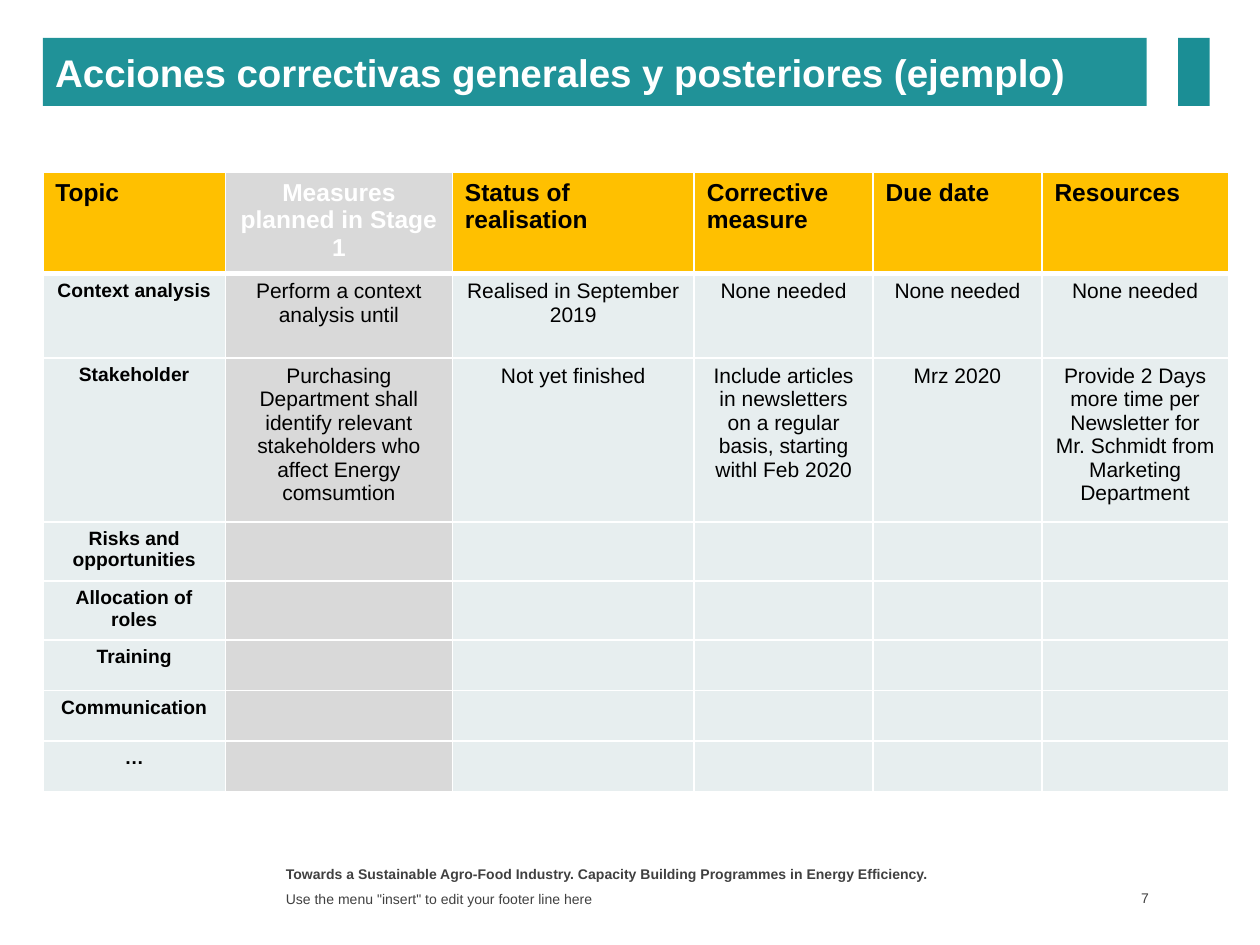
from pptx import Presentation
from pptx.dml.color import RGBColor
from pptx.enum.shapes import MSO_SHAPE
from pptx.enum.text import MSO_ANCHOR, PP_ALIGN
from pptx.oxml import parse_xml
from pptx.oxml.ns import nsdecls
from pptx.util import Inches, Pt

TEAL = RGBColor(0x20, 0x92, 0x98)
DARK_TEAL = RGBColor(0x1B, 0x8E, 0x95)
AMBER = RGBColor(0xFF, 0xC0, 0x00)
GREY = RGBColor(0xD9, 0xD9, 0xD9)
PALE = RGBColor(0xE7, 0xEE, 0xEF)
FOOTER_GREY = RGBColor(0x40, 0x40, 0x40)
BLACK = RGBColor(0, 0, 0)
WHITE = RGBColor(0xFF, 0xFF, 0xFF)


def write(frame, text, size, color, bold=False, align=PP_ALIGN.LEFT):
    frame.text = text
    frame.word_wrap = True
    paragraph = frame.paragraphs[0]
    paragraph.alignment = align
    for run in paragraph.runs:
        run.font.name = "Arial"
        run.font.size = Pt(size)
        run.font.bold = bold
        run.font.color.rgb = color


def set_borders(cell, bottom_width, top_width):
    widths = {"lnL": 1, "lnR": 1, "lnT": top_width, "lnB": bottom_width}
    for position, (side, width) in enumerate(widths.items()):
        line = parse_xml(
            f'<a:{side} {nsdecls("a")} w="{Pt(width)}"><a:solidFill>'
            f'<a:srgbClr val="{WHITE}"/></a:solidFill></a:{side}>')
        cell._tc.get_or_add_tcPr().insert(position, line)


prs = Presentation()
prs.slide_width, prs.slide_height = Inches(10), Inches(7.5)
slide = prs.slides.add_slide(prs.slide_layouts[6])

# Footer lines and slide number
footers = [
    (2.17, 6.82, 5.5, 0.21, True, MSO_ANCHOR.TOP, PP_ALIGN.LEFT,
     "Towards a Sustainable Agro-Food Industry. Capacity Building Programmes in Energy Efficiency."),
    (2.17, 7.04, 5.5, 0.19, False, MSO_ANCHOR.MIDDLE, PP_ALIGN.LEFT,
     'Use the menu "insert" to edit your footer line here'),
    (8.6, 7.03, 0.56, 0.2, False, MSO_ANCHOR.MIDDLE, PP_ALIGN.RIGHT, "7"),
]
for left, top, width, height, bold, anchor, align, text in footers:
    footer = slide.shapes.add_textbox(
        Inches(left), Inches(top), Inches(width), Inches(height)).text_frame
    write(footer, text, 8, FOOTER_GREY, bold, align)
    footer.vertical_anchor = anchor
footer.margin_right = Inches(0.04)  # slide number

# Corrective actions table
column_widths = [1.45, 1.8, 1.92, 1.42, 1.34, 1.48]
row_heights = [0.79, 0.67, 1.3, 0.47, 0.47, 0.4, 0.4, 0.4]
rows = [
    ["Topic", "Measures planned in Stage 1", "Status of realisation",
     "Corrective measure", "Due date", "Resources"],
    ["Context analysis", "Perform a context analysis until",
     "Realised in September 2019"] + ["None needed"] * 3,
    ["Stakeholder",
     "Purchasing Department shall identify relevant stakeholders who affect Energy comsumtion",
     "Not yet finished",
     "Include articles in newsletters on a regular basis, starting withl Feb 2020",
     "Mrz 2020",
     "Provide 2 Days more time per Newsletter for Mr. Schmidt from Marketing Department"],
]
for topic in ["Risks and opportunities", "Allocation of roles", "Training",
              "Communication", "…"]:
    rows.append([topic] + [""] * 5)

actions = slide.shapes.add_table(
    len(rows), len(column_widths), Inches(0.34), Inches(1.37),
    Inches(sum(column_widths)), Inches(sum(row_heights))).table
for column, width in zip(actions.columns, column_widths):
    column.width = Inches(width)
for row, height in zip(actions.rows, row_heights):
    row.height = Inches(height)

for r, texts in enumerate(rows):
    for c, text in enumerate(texts):
        cell = actions.cell(r, c)
        header, planned = r == 0, c == 1
        cell.fill.solid()
        cell.fill.fore_color.rgb = GREY if planned else AMBER if header else PALE
        set_borders(cell, bottom_width=3 if header else 1,
                    top_width=3 if r == 1 else 1)
        if text:
            size = 14 if header else 11 if c == 0 else 12
            write(cell.text_frame, text, size,
                  WHITE if header and planned else BLACK,
                  bold=header or c == 0,
                  align=PP_ALIGN.LEFT if header and not planned else PP_ALIGN.CENTER)

# Title bar and accent block
for left, width, color in [(0.34, 8.76, TEAL), (9.35, 0.25, DARK_TEAL)]:
    bar = slide.shapes.add_shape(
        MSO_SHAPE.RECTANGLE, Inches(left), Inches(0.3), Inches(width), Inches(0.54))
    bar.shadow.inherit = False
    bar.fill.solid()
    bar.fill.fore_color.rgb = color
    bar.line.fill.background()
    if color == TEAL:
        write(bar.text_frame, "Acciones correctivas generales y posteriores (ejemplo)",
              22, WHITE, bold=True)
        bar.text_frame.vertical_anchor = MSO_ANCHOR.MIDDLE

prs.save("out.pptx")
